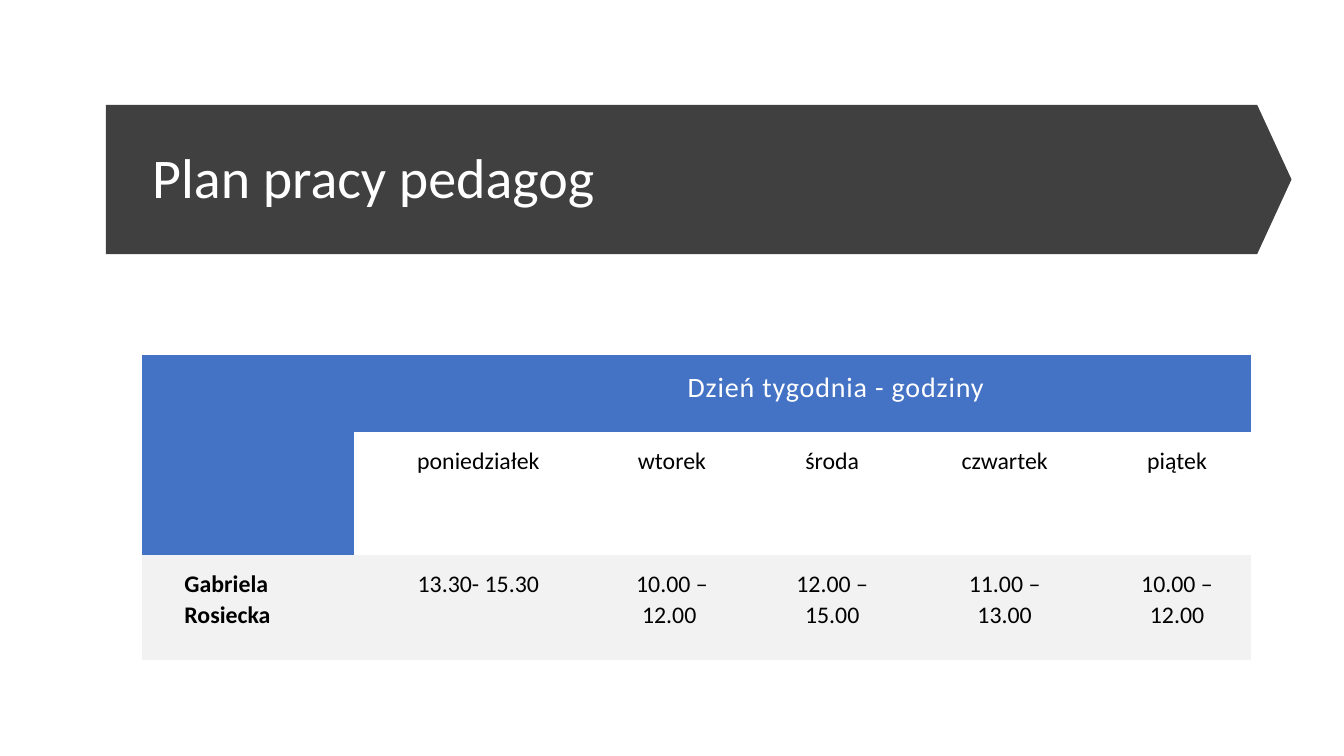
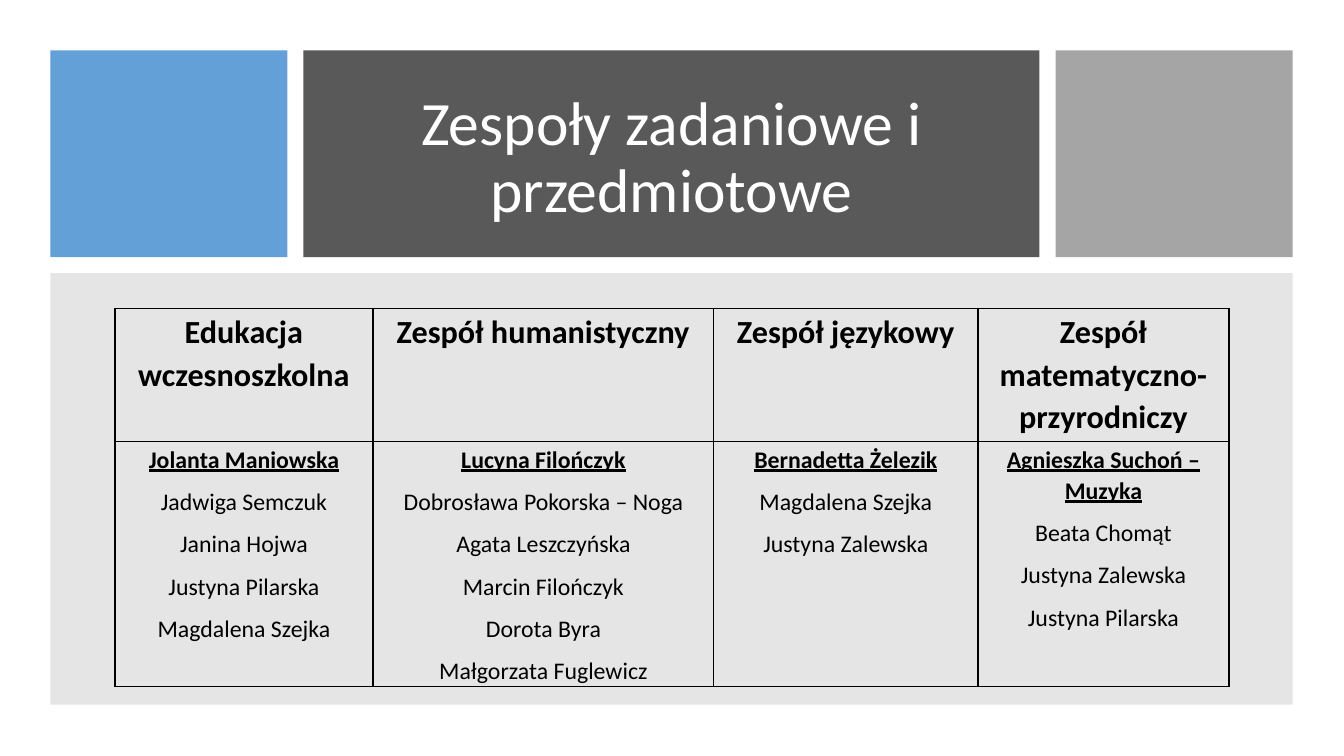
from lxml.etree import SubElement
from pptx import Presentation
from pptx.dml.color import RGBColor
from pptx.enum.shapes import MSO_SHAPE
from pptx.enum.text import MSO_ANCHOR, MSO_AUTO_SIZE, PP_ALIGN
from pptx.oxml.ns import qn
from pptx.util import Inches, Pt

FONT = "Calibri"
WHITE = RGBColor(0xFF, 0xFF, 0xFF)
BLACK = RGBColor(0x00, 0x00, 0x00)
CHARCOAL = RGBColor(0x40, 0x40, 0x40)
DARK_GRAY = RGBColor(0x59, 0x59, 0x59)
MID_GRAY = RGBColor(0xA5, 0xA5, 0xA5)
PANEL_GRAY = RGBColor(0x80, 0x80, 0x80)
ROW_GRAY = RGBColor(0xF2, 0xF2, 0xF2)
SKY_BLUE = RGBColor(0x5B, 0x9B, 0xD5)
HEADER_BLUE = RGBColor(0x44, 0x72, 0xC4)

PLAIN_TABLE_STYLE = "{2D5ABB26-0587-4C30-8999-92F81FD0307C}"
TITLE_ONLY = 5
SCHEDULE_INSETS = (0.42, 0.12, 0.25, 0.25)
TEAM_INSETS = (0.11, 0.02, 0.11, 0)

DAYS = ["poniedziałek", "wtorek", "środa", "czwartek", "piątek"]
HOURS = ["13.30- 15.30", "10.00 – 12.00 ", "12.00 – 15.00",
         "11.00 – 13.00", "10.00 – 12.00"]
# Each team lists its leader first.
TEAMS = {
    "Edukacja wczesnoszkolna": [
        "Jolanta Maniowska", "Jadwiga Semczuk", "Janina Hojwa",
        "Justyna Pilarska", "Magdalena Szejka"],
    "Zespół humanistyczny": [
        "Lucyna Filończyk", "Dobrosława Pokorska – Noga", "Agata Leszczyńska",
        "Marcin Filończyk", "Dorota Byra", "Małgorzata Fuglewicz"],
    "Zespół językowy": [
        "Bernadetta Żelezik", "Magdalena Szejka", "Justyna Zalewska"],
    "Zespół matematyczno- przyrodniczy": [
        "Agnieszka Suchoń – Muzyka", "Beata Chomąt", "Justyna Zalewska",
        "Justyna Pilarska"],
}


def write(paragraph, text, size=17, color=BLACK, bold=False, underline=False,
          align=PP_ALIGN.CENTER, line_spacing=1.07, space_after=8,
          indent=0, letter_spacing=0):
    paragraph.alignment = align
    paragraph.line_spacing = line_spacing
    paragraph.space_after = Pt(space_after)
    if indent:
        properties = paragraph._p.get_or_add_pPr()
        properties.set("marL", str(Inches(indent)))
        properties.set("indent", "0")
    run = paragraph.add_run()
    run.text = text
    font = run.font
    font.name, font.size, font.bold = FONT, Pt(size), bold
    font.underline = underline
    font.color.rgb = color
    if letter_spacing:
        run._r.get_or_add_rPr().set("spc", str(round(letter_spacing * 100)))


def add_block(slide, box, color, kind=MSO_SHAPE.RECTANGLE, opacity=None):
    block = slide.shapes.add_shape(kind, *map(Inches, box))
    block.shadow.inherit = False
    block.fill.solid()
    block.fill.fore_color.rgb = color
    block.line.fill.background()
    if opacity is not None:
        tint = block._element.spPr.find(".//" + qn("a:srgbClr"))
        SubElement(tint, qn("a:alpha"), val=str(opacity * 1000))
    return block


def set_title(slide, text, box, size, align):
    """Fill the title placeholder and bring it in front of the blocks."""
    title = slide.shapes.title
    title.left, title.top, title.width, title.height = map(Inches, box)
    frame = title.text_frame
    frame.word_wrap = True
    frame.auto_size = MSO_AUTO_SIZE.NONE
    frame.vertical_anchor = MSO_ANCHOR.MIDDLE
    write(frame.paragraphs[0], text, size=size, color=WHITE, align=align,
          line_spacing=0.9, space_after=0)
    slide.shapes._spTree.append(title._element)


def add_plain_table(slide, left, top, widths, heights):
    frame = slide.shapes.add_table(
        len(heights), len(widths), Inches(left), Inches(top),
        Inches(sum(widths)), Inches(sum(heights)))
    table = frame.table
    table.first_row = table.horz_banding = False
    table._tbl.tblPr.find(qn("a:tableStyleId")).text = PLAIN_TABLE_STYLE
    for column, width in zip(table.columns, widths):
        column.width = Inches(width)
    for row, height in zip(table.rows, heights):
        row.height = Inches(height)
    return table


def add_borders(cell, color=BLACK, width=1):
    for side in ("lnL", "lnR", "lnT", "lnB"):
        line = SubElement(cell._tc.get_or_add_tcPr(), qn("a:" + side),
                          w=str(Pt(width)))
        SubElement(SubElement(line, qn("a:solidFill")), qn("a:srgbClr"),
                   val=str(color))


def style_cell(cell, insets, fill=None):
    (cell.margin_left, cell.margin_top,
     cell.margin_right, cell.margin_bottom) = map(Inches, insets)
    if fill is None:
        cell.fill.background()
    else:
        cell.fill.solid()
        cell.fill.fore_color.rgb = fill


def first_paragraph(cell):
    return cell.text_frame.paragraphs[0]


def build_schedule(slide):
    arrow = add_block(slide, (1.05, 1.04, 11.76, 1.48), CHARCOAL,
                      kind=MSO_SHAPE.PENTAGON)
    arrow.adjustments[0] = 0.23
    set_title(slide, "Plan pracy pedagog", (1.41, 1.32, 10.96, 0.94),
              size=40, align=PP_ALIGN.LEFT)

    table = add_plain_table(slide, 1.41, 3.52,
                            [2.1, 2.3, 1.54, 1.64, 1.78, 1.64],
                            [0.77, 1.22, 1.04])
    for row, fill in enumerate([HEADER_BLUE, None, ROW_GRAY]):
        for cell in table.rows[row].cells:
            style_cell(cell, SCHEDULE_INSETS, fill)
    corner, heading = table.cell(0, 0), table.cell(0, 1)
    corner.merge(table.cell(1, 0))
    heading.merge(table.cell(0, len(DAYS)))
    heading.vertical_anchor = MSO_ANCHOR.MIDDLE
    write(first_paragraph(heading), "Dzień tygodnia - godziny", size=20,
          color=WHITE, indent=0.49, letter_spacing=0.6)
    write(first_paragraph(table.cell(2, 0)), "Gabriela Rosiecka", bold=True,
          align=PP_ALIGN.LEFT)
    for column, (day, hours) in enumerate(zip(DAYS, HOURS), start=1):
        write(first_paragraph(table.cell(1, column)), day)
        write(first_paragraph(table.cell(2, column)), hours)


def build_teams(slide):
    add_block(slide, (0.5, 0.5, 2.35, 2.05), SKY_BLUE, opacity=95)
    add_block(slide, (3.01, 0.5, 7.3, 2.05), DARK_GRAY)
    add_block(slide, (10.47, 0.5, 2.35, 2.05), MID_GRAY)
    add_block(slide, (0.5, 2.71, 12.32, 4.28), PANEL_GRAY, opacity=20)
    set_title(slide, "Zespoły zadaniowe i przedmiotowe",
              (3.33, 0.8, 6.66, 1.56), size=44, align=PP_ALIGN.CENTER)

    table = add_plain_table(slide, 1.14, 3.06, [2.56, 3.38, 2.62, 2.49],
                            [1.32, 2.42])
    for cell in table.iter_cells():
        add_borders(cell)
        style_cell(cell, TEAM_INSETS)
    for column, (team, members) in enumerate(TEAMS.items()):
        write(first_paragraph(table.cell(0, column)), team, size=23, bold=True)
        roster = table.cell(1, column)
        leader, *others = members
        write(first_paragraph(roster), leader, bold=True, underline=True)
        for member in others:
            write(roster.text_frame.add_paragraph(), member)


def main():
    deck = Presentation()
    deck.slide_width, deck.slide_height = Inches(13.33), Inches(7.5)
    for build in (build_schedule, build_teams):
        build(deck.slides.add_slide(deck.slide_layouts[TITLE_ONLY]))
    deck.save("out.pptx")


if __name__ == "__main__":
    main()
